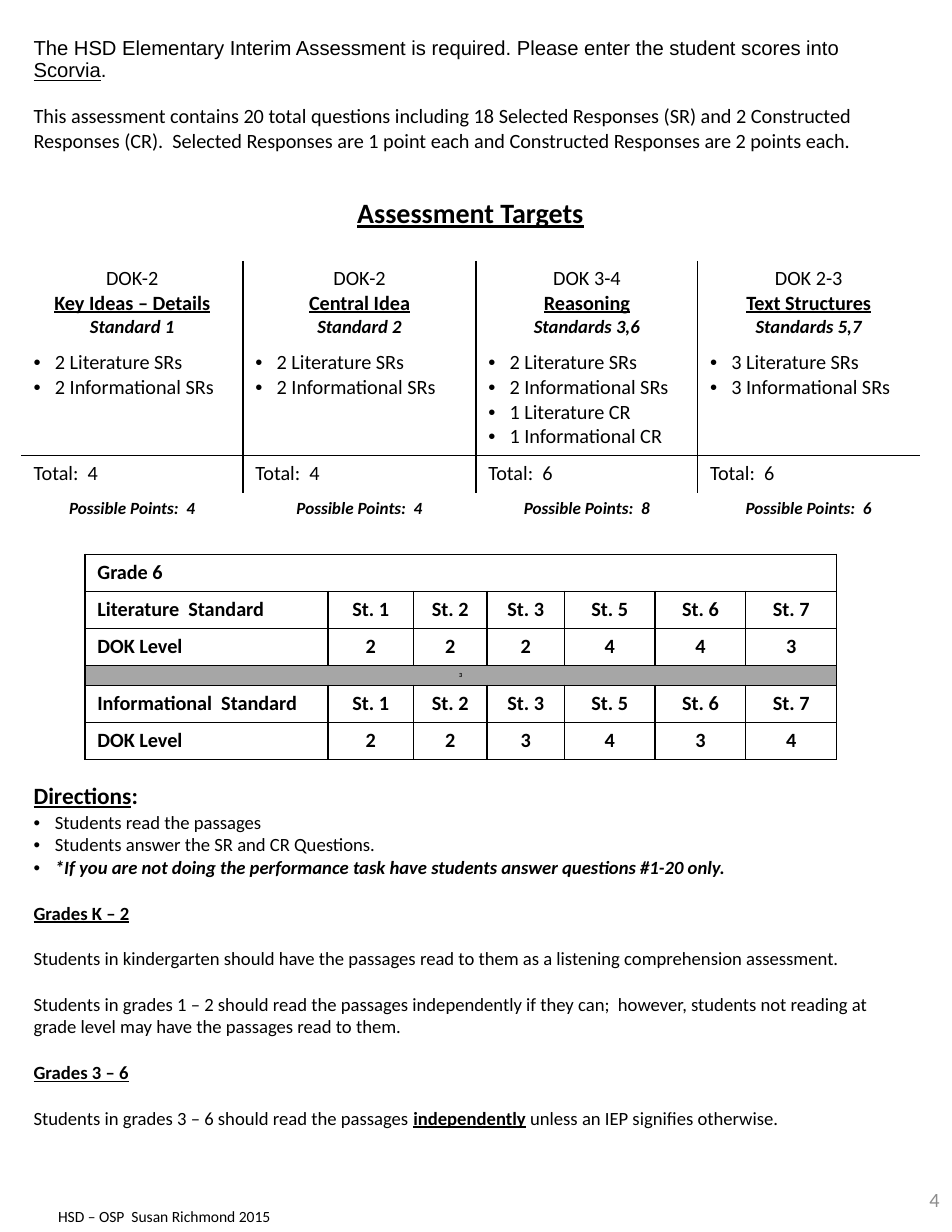
from lxml.etree import SubElement
from pptx import Presentation
from pptx.dml.color import RGBColor
from pptx.enum.text import MSO_ANCHOR, PP_ALIGN
from pptx.oxml.ns import qn
from pptx.util import Inches, Pt

COLORS = {"text": "000000", "line": "000000", "band": "A6A6A6", "number": "8C8C8C"}
NO_STYLE = "{2D5ABB26-0587-4C30-8999-92F81FD0307C}"
LEFT, CENTER, RIGHT = PP_ALIGN.LEFT, PP_ALIGN.CENTER, PP_ALIGN.RIGHT
BLANK = 14.65  # height of one 12 pt line


def write(tf, paras, align=LEFT, color="text"):
    """Each paragraph: (runs, size, space before, bullet).

    Each run: (text, style), where style joins b, i, u and a (Arial).
    """
    for i, (runs, size, before, bullet) in enumerate(paras):
        p = tf.paragraphs[0] if i == 0 else tf.add_paragraph()
        p.alignment = align
        if before:
            p.space_before = Pt(before)
        if bullet:
            pPr = p._p.get_or_add_pPr()
            pPr.set("marL", str(Inches(0.19)))
            pPr.set("indent", str(-Inches(0.19)))
            SubElement(pPr, qn("a:buFont"), typeface="Arial")
            SubElement(pPr, qn("a:buChar"), char="•")
        for text, style in runs:
            r = p.add_run()
            r.text = text
            r.font.name = "Arial" if "a" in style else "Calibri"
            r.font.size = Pt(size)
            r.font.bold, r.font.italic, r.font.underline = (k in style for k in "biu")
            r.font.color.rgb = RGBColor.from_string(COLORS[color])


def make_table(left, top, widths, heights, borders):
    """Add an unstyled table; borders(row, col) gives the sides to draw."""
    gf = slide.shapes.add_table(len(heights), len(widths), Inches(left), Inches(top),
                                Inches(sum(widths)), Inches(sum(heights)))
    table = gf.table
    table.first_row = table.horz_banding = False
    table._tbl.tblPr.find(qn("a:tableStyleId")).text = NO_STYLE
    for col, width in zip(table.columns, widths):
        col.width = Inches(width)
    for i, height in enumerate(heights):
        table.rows[i].height = Inches(height)
        for j in range(len(widths)):
            cell = table.cell(i, j)
            cell.margin_left = cell.margin_right = Inches(0.11)
            cell.margin_top = cell.margin_bottom = Inches(0.05)
            tcPr = cell._tc.get_or_add_tcPr()
            for side in "LRTB":
                ln = SubElement(tcPr, qn("a:ln" + side), w=str(Pt(1)))
                if side in borders(i, j):
                    fill = SubElement(ln, qn("a:solidFill"))
                    SubElement(fill, qn("a:srgbClr"), val=COLORS["line"])
                else:
                    SubElement(ln, qn("a:noFill"))
            cell.fill.background()
    return table


prs = Presentation()
prs.slide_width, prs.slide_height = Inches(8.5), Inches(11)
slide = prs.slides.add_slide(prs.slide_layouts[6])

# Footer
sp = slide.shapes.add_textbox(Inches(0.42), Inches(10.73), Inches(6.17), Inches(0.27))
sp.text_frame.word_wrap = True
write(sp.text_frame, [([("HSD – OSP  Susan Richmond 2015", "")], 10, 0, False)])


# Page table: intro, targets and directions
def page_borders(i, j):
    sides = ""
    if 2 <= i <= 4:
        sides += "L" * (j > 0) + "R" * (j < 3)
    return sides + "T" * (i == 4) + "B" * (i == 3)


page = make_table(0.19, 0.28, [1.98, 2.08, 1.98, 1.98],
                  [1.43, 0.62, 0.75, 0.99, 0.33, 0.29, 6.18], page_borders)
for i in (0, 1, 6):
    page.cell(i, 0).merge(page.cell(i, 3))

write(page.cell(0, 0).text_frame, [
    ([("The HSD Elementary Interim Assessment is required. Please enter the student "
       "scores into ", "a"), ("Scorvia", "au"), (".", "a")], 13, 0, False),
    ([("This assessment contains 20 total questions including 18 Selected Responses (SR) "
       "and 2 Constructed Responses (CR).  Selected Responses are 1 point each and "
       "Constructed Responses are 2 points each.", "")], 13, 14.5, False),
])
write(page.cell(1, 0).text_frame, [([("Assessment Targets", "bu")], 18, 0, False)], CENTER)

# Target columns
targets = [
    ("DOK-2", "Key Ideas – Details", "Standard 1",
     ["2 Literature SRs", "2 Informational SRs"], 4, 4),
    ("DOK-2", "Central Idea", "Standard 2",
     ["2 Literature SRs", "2 Informational SRs"], 4, 4),
    ("DOK 3-4", "Reasoning", "Standards 3,6",
     ["2 Literature SRs", "2 Informational SRs", "1 Literature CR", "1 Informational CR"], 6, 8),
    ("DOK 2-3", "Text Structures", "Standards 5,7",
     ["3 Literature SRs", "3 Informational SRs"], 6, 6),
]
for j, (dok, target, standard, items, total, points) in enumerate(targets):
    write(page.cell(2, j).text_frame, [([(dok, "")], 13, 0, False),
                                       ([(target, "bu")], 13, 0, False),
                                       ([(standard, "bi")], 12, 0, False)], CENTER)
    write(page.cell(3, j).text_frame, [([(item, "")], 13, 0, True) for item in items])
    write(page.cell(4, j).text_frame, [([(f"Total:  {total}", "")], 13, 0, False)])
    write(page.cell(5, j).text_frame,
          [([(f"Possible Points:  {points}", "bi")], 11, 0, False)], CENTER)

# Directions, below the room for the grade table
directions = page.cell(6, 0)
directions.margin_top = Inches(2.3)
write(directions.text_frame, [
    ([("Directions", "bu"), (":", "b")], 15, 0, False),
    ([("Students read the passages", "")], 12, 0, True),
    ([("Students answer the SR and CR Questions.", "")], 12, 0, True),
    ([("*If you are not doing the performance task have students answer questions "
       "#1-20 only.", "bi")], 12, 0, True),
    ([("Grades K – 2", "bu")], 12, BLANK, False),
    ([("Students in kindergarten should have the passages read to them as a listening "
       "comprehension assessment.", "")], 12, BLANK, False),
    ([("Students in grades 1 – 2 should read the passages independently if they can;  "
       "however, students not reading at grade level may have the passages read to them.",
       "")], 12, BLANK, False),
    ([("Grades 3 – 6", "bu")], 12, BLANK, False),
    ([("Students in grades 3 – 6 should read the passages ", ""), ("independently", "bu"),
      (" unless an IEP signifies otherwise.", "")], 12, BLANK, False),
])

# Grade table
standards = ["St. 1", "St. 2", "St. 3", "St. 5", "St. 6", "St. 7"]
grade_rows = [
    ["Grade 6"],
    ["Literature  Standard", *standards],
    ["DOK Level", *"222443"],
    ["3"],
    ["Informational  Standard", *standards],
    ["DOK Level", *"223434"],
]
grade = make_table(0.76, 4.95, [2.17, 0.76, 0.66, 0.69, 0.81, 0.81, 0.81],
                   [0.33, 0.33, 0.33, 0.18, 0.33, 0.33], lambda i, j: "LRTB")
for i, row in enumerate(grade_rows):
    band = i == 3
    if len(row) == 1:
        grade.cell(i, 0).merge(grade.cell(i, 6))
    for j, text in enumerate(row):
        cell = grade.cell(i, j)
        centered = band or j > 0
        if centered:
            cell.vertical_anchor = MSO_ANCHOR.MIDDLE
        write(cell.text_frame, [([(text, "b")], 4 if band else 13, 0, False)],
              CENTER if centered else LEFT)
grade.cell(3, 0).fill.solid()
grade.cell(3, 0).fill.fore_color.rgb = RGBColor.from_string(COLORS["band"])

# Page number
sp = slide.shapes.add_textbox(Inches(7.84), Inches(10.41), Inches(0.66), Inches(0.59))
tf = sp.text_frame
tf.word_wrap = True
tf.vertical_anchor = MSO_ANCHOR.MIDDLE
tf.margin_left = tf.margin_right = Inches(0.11)
write(tf, [([("4", "")], 13, 0, False)], RIGHT, color="number")

prs.save("out.pptx")
